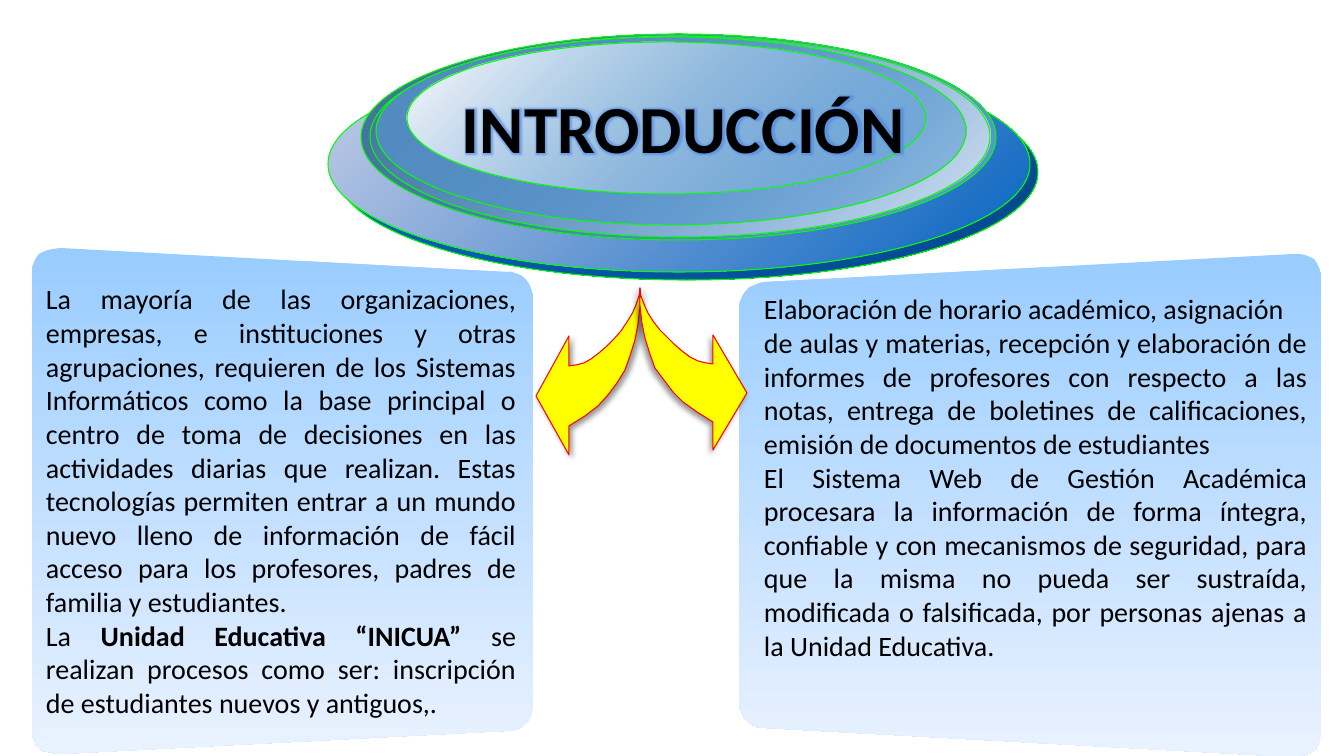
from lxml import etree
from pptx import Presentation
from pptx.dml.color import RGBColor
from pptx.enum.shapes import MSO_SHAPE
from pptx.enum.text import MSO_AUTO_SIZE, PP_ALIGN
from pptx.oxml.ns import qn
from pptx.util import Pt

PX = 914400 / 100.8
OVAL = MSO_SHAPE.OVAL
JUSTIFY, LEFT = PP_ALIGN.JUSTIFY, PP_ALIGN.LEFT
FIT = MSO_AUTO_SIZE.SHAPE_TO_FIT_TEXT

LEFT_TEXT = [
    [("La mayoría de las organizaciones, empresas, e instituciones y otras "
      "agrupaciones, requieren de los Sistemas Informáticos como la base "
      "principal o centro de toma de decisiones en las actividades diarias que "
      "realizan. Estas tecnologías permiten entrar a un mundo nuevo lleno de "
      "información de fácil acceso para los profesores, padres de familia y "
      "estudiantes.", False)],
    [("La ", False), ("Unidad Educativa “INICUA” ", True),
     ("se realizan procesos como ser: inscripción de estudiantes nuevos y "
      "antiguos,.", False)],
]
RIGHT_TEXT = [
    [("Elaboración de horario académico, asignación", False)],
    [("de aulas y materias, recepción y elaboración de informes de profesores "
      "con respecto a las notas, entrega de boletines de calificaciones, "
      "emisión de documentos de estudiantes", False)],
    [("El Sistema Web de Gestión Académica procesara la información de forma "
      "íntegra, confiable y con mecanismos de seguridad, para que la misma no "
      "pueda ser sustraída, modificada o falsificada, por personas ajenas a la "
      "Unidad Educativa.", False)],
]

# Box, (start colour, opacity %), (end colour, opacity %)
ELLIPSES = [
    ((336, 64, 702, 216), ("0563C1", 100), ("04488D", 100)),
    ((328, 56, 702, 216), ("C6CDE6", 100), ("0563C1", 100)),
    ((361, 34, 635, 206), ("416F98", 100), ("5B9BD5", 100)),
    ((370, 36, 620, 201), ("5B9BD5", 0), ("D8E3F1", 100)),
    ((376, 37, 590, 188), ("528CC0", 100), ("5B9BD5", 48)),
    ((407, 42, 519, 152), ("FFFFFF", 100), ("5B9BD5", 38)),
]

# Distance from the shared top point: sideways, down
ARROW = [
    (0, 0), (0, 18), (2, 36), (5, 52), (10, 68), (15, 82), (23, 95), (32, 107),
    (42, 118), (55, 128), (71, 138), (71, 167), (104, 108), (71, 48), (71, 78),
    (64, 77), (56, 75), (49, 71), (41, 65), (33, 58), (26, 51), (19, 43),
    (13, 34), (8, 26), (4, 17), (1, 8),
]


def px(n):
    return round(n * PX)


def rgb(color):
    return RGBColor.from_string(color)


def add_effect(parent, kind, color, alpha, **attrs):
    """Append an effect list holding one shadow or glow."""
    effects = etree.SubElement(parent, qn("a:effectLst"))
    effect = etree.SubElement(effects, qn("a:" + kind))
    for name, value in attrs.items():
        effect.set(name, str(value))
    clr = etree.SubElement(effect, qn("a:srgbClr"), val=color)
    etree.SubElement(clr, qn("a:alpha"), val=str(alpha * 1000))
    return effects


def set_gradient(sp, angle, *ends):
    """Fill with (colour, opacity %) ends; angle runs anticlockwise."""
    sp.fill.gradient()
    sp.fill.gradient_angle = angle
    for stop, position, (color, opacity) in zip(sp.fill.gradient_stops, (0, 1), ends):
        stop.position = position
        stop.color.rgb = rgb(color)
    for clr, (_, opacity) in zip(sp._element.spPr.iter(qn("a:srgbClr")), ends):
        if opacity < 100:
            etree.SubElement(clr, qn("a:alpha"), val=str(opacity * 1000))


def set_line(sp, color):
    sp.line.color.rgb = rgb(color)
    sp.line.width = Pt(0.75)


def add_polygon(s, points):
    builder = s.shapes.build_freeform(*points[0], scale=PX)
    builder.add_line_segments(points[1:], close=True)
    return builder.convert_to_shape()


def rounded(corners, radius, steps=8):
    """Return the outline of a polygon with its corners rounded."""
    points = []
    for i, (x, y) in enumerate(corners):
        ends = []
        for nx, ny in (corners[i - 1], corners[(i + 1) % len(corners)]):
            f = radius / ((nx - x) ** 2 + (ny - y) ** 2) ** 0.5
            ends.append((x + (nx - x) * f, y + (ny - y) * f))
        (ax, ay), (bx, by) = ends
        for t in (n / steps for n in range(steps + 1)):
            u = 1 - t
            points.append((round(u * u * ax + 2 * u * t * x + t * t * bx),
                           round(u * u * ay + 2 * u * t * y + t * t * by)))
    return points


def add_panel(s, corners):
    sp = add_polygon(s, rounded(corners, 28))
    sp.shadow.inherit = False
    set_gradient(sp, 270, ("99CCFF", 100), ("E9F2FF", 100))
    sp.line.fill.background()


def add_arrow(s, side, width, height, shadow_angle):
    """Add a curved arrow; side is -1 for left and 1 for right."""
    sp = add_polygon(s, [(640 + side * round(x * width / 104),
                          288 + round(y * height / 167)) for x, y in ARROW])
    sp.fill.solid()
    sp.fill.fore_color.rgb = rgb("FFFF00")
    set_line(sp, "FF0000")
    add_effect(sp._element.spPr, "outerShdw", "000000", 40, blurRad=Pt(4),
               dist=Pt(3), dir=shadow_angle * 60000)


def add_emblem(s):
    group = s.shapes.add_group_shape()
    for box, start, end in ELLIPSES:
        sp = group.shapes.add_shape(OVAL, *map(px, box))
        sp.shadow.inherit = False
        set_gradient(sp, 315, start, end)
        set_line(sp, "00FF00")


def add_text(s, box, paragraphs, size, align):
    tf = s.shapes.add_textbox(*map(px, box)).text_frame
    tf.word_wrap = True
    tf.auto_size = FIT
    for i, runs in enumerate(paragraphs):
        p = tf.add_paragraph() if i else tf.paragraphs[0]
        p.alignment = align
        for text, bold in runs:
            r = p.add_run()
            r.text = text
            r.font.size = Pt(size)
            r.font.name = "Calibri"
            r.font.bold = bold
            r.font.color.rgb = rgb("000000")
    return tf


def add_title(s):
    tf = add_text(s, (452, 81, 505, 92), [[("INTRODUCCIÓN", True)]], 48, LEFT)
    rPr = tf.paragraphs[0].runs[0].font._element
    glow = add_effect(rPr, "glow", "4A86E8", 60, rad=Pt(5))
    rPr.find(qn("a:solidFill")).addnext(glow)


def main():
    prs = Presentation()
    prs.slide_width, prs.slide_height = px(1344), px(756)
    s = prs.slides.add_slide(prs.slide_layouts[6])
    add_panel(s, [(739, 284), (1321, 252), (1321, 758), (739, 727)])
    add_panel(s, [(32, 247), (533, 273), (533, 730), (32, 755)])
    add_text(s, (36, 277, 490, 452), LEFT_TEXT, 20, JUSTIFY)
    add_arrow(s, -1, 104, 167, 45)
    add_arrow(s, 1, 107, 162, 135)
    add_text(s, (754, 287, 563, 417), RIGHT_TEXT, 20, JUSTIFY)
    add_emblem(s)
    add_title(s)
    prs.save("out.pptx")


if __name__ == "__main__":
    main()
